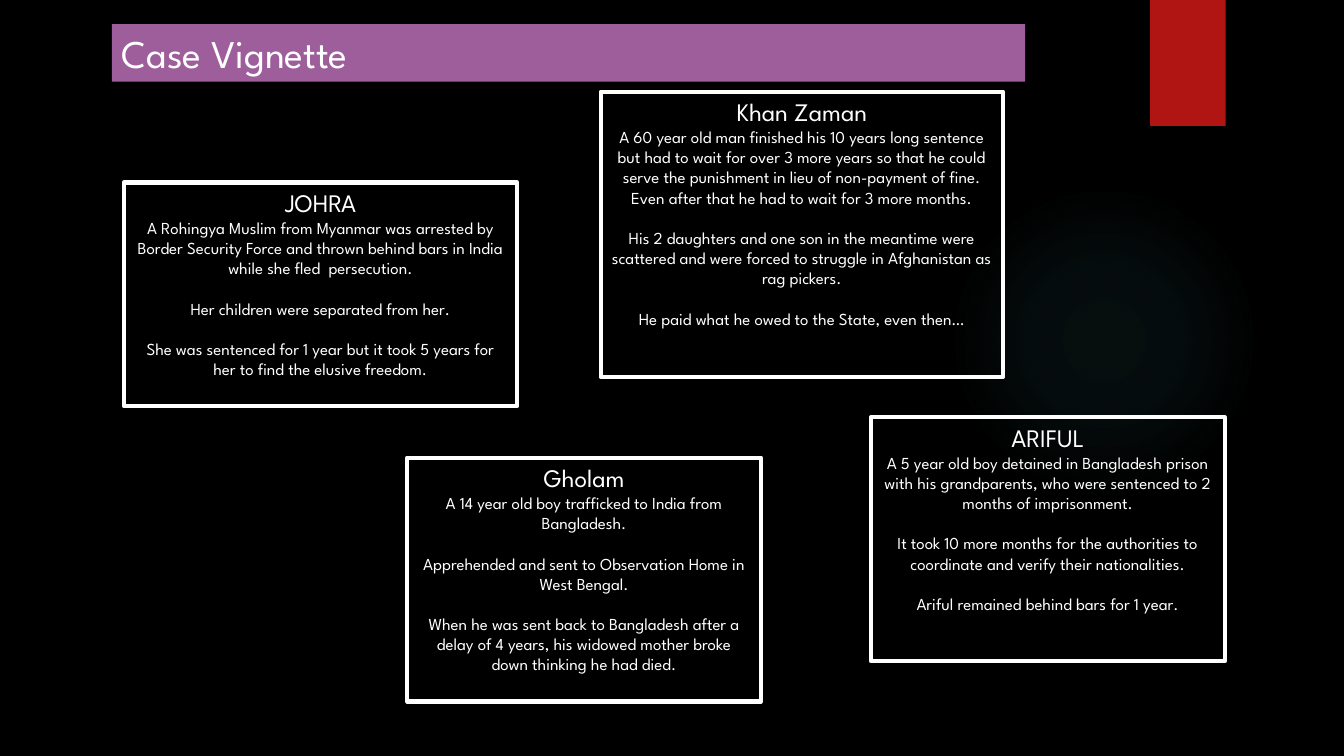
from pptx import Presentation
from pptx.dml.color import RGBColor
from pptx.enum.shapes import MSO_SHAPE
from pptx.enum.text import MSO_ANCHOR, MSO_AUTO_SIZE, PP_ALIGN
from pptx.oxml import parse_xml
from pptx.oxml.ns import nsdecls
from pptx.util import Pt

RECT, OVAL = MSO_SHAPE.RECTANGLE, MSO_SHAPE.OVAL
TOP, FIXED = MSO_ANCHOR.TOP, MSO_AUTO_SIZE.NONE
LEFT, CENTER = PP_ALIGN.LEFT, PP_ALIGN.CENTER

FONT = "League Spartan"
COLORS = {"back": "000000", "text": "FFFFFF", "title": "9E5E9B",
          "tab": "B01513", "glow": "50B9C1"}
GAP = 14.4  # one line of body text

CASES = [
    ("JOHRA", (88.6, 130.3, 280.8, 159.8), [
        "A Rohingya Muslim from Myanmar was arrested by Border Security Force "
        "and thrown behind bars in India while she fled  persecution.",
        "Her children were separated from her.",
        "She was sentenced for 1 year but it took 5 years for her to find the "
        "elusive freedom."]),
    ("Gholam", (290.9, 326.9, 252.7, 174.2), [
        "A 14 year old boy trafficked to India from Bangladesh.",
        "Apprehended and sent to Observation Home in West Bengal.",
        "When he was sent back to Bangladesh after a delay of 4 years, his "
        "widowed mother broke down thinking he had died."]),
    ("Khan Zaman", (429.1, 65.5, 287.3, 203.8), [
        "A 60 year old man finished his 10 years long sentence but had to wait "
        "for over 3 more years so that he could serve the punishment in lieu of "
        "non-payment of fine. Even after that he had to wait for 3 more months.",
        "His 2 daughters and one son in the meantime were scattered and were "
        "forced to struggle in Afghanistan as rag pickers.",
        "He paid what he owed to the State, even then…"]),
    ("ARIFUL", (622.1, 298.1, 252.7, 174.2), [
        "A 5 year old boy detained in Bangladesh prison with his grandparents, "
        "who were sentenced to 2 months of imprisonment.",
        "It took 10 more months for the authorities to coordinate and verify "
        "their nationalities.",
        "Ariful remained behind bars for 1 year."]),
]


def tint(name):
    return RGBColor.from_string(COLORS[name])


def write(para, text, size=12, align=CENTER, before=0):
    para.alignment = align
    para.line_spacing = 1.0
    para.space_before = Pt(before)
    run = para.add_run()
    run.text = text
    run.font.size = Pt(size)
    run.font.name = FONT
    run.font.color.rgb = tint("text")


def setup(frame):
    frame.word_wrap = True
    frame.auto_size = FIXED
    frame.vertical_anchor = TOP


class Page:
    def __init__(self, deck):
        self.slide = deck.slides.add_slide(deck.slide_layouts[5])
        fill = self.slide.background.fill
        fill.solid()
        fill.fore_color.rgb = tint("back")

    def shape(self, kind, place):
        item = self.slide.shapes.add_shape(kind, *map(Pt, place))
        item.shadow.inherit = False
        item.fill.background()
        item.line.fill.background()
        return item

    def glow(self, place):
        """Draw a disc that fades out from its centre."""
        disc = self.shape(OVAL, place)
        stops = "".join(
            f'<a:gs pos="{pos}000"><a:srgbClr val="{COLORS["glow"]}">'
            f'<a:alpha val="{alpha}000"/></a:srgbClr></a:gs>'
            for pos, alpha in ((0, 7), (36, 6), (69, 0)))
        grad = parse_xml(
            f'<a:gradFill {nsdecls("a")} rotWithShape="1"><a:gsLst>{stops}</a:gsLst>'
            '<a:path path="circle"><a:fillToRect l="50000" t="50000" '
            'r="50000" b="50000"/></a:path></a:gradFill>')
        props = disc.element.spPr
        props.replace(props.find("a:noFill", props.nsmap), grad)

    def tab(self, place):
        """Draw the red marker with its soft shadow."""
        mark = self.shape(RECT, place)
        mark.fill.solid()
        mark.fill.fore_color.rgb = tint("tab")
        props = mark.element.spPr
        props.find("a:effectLst", props.nsmap).append(parse_xml(
            f'<a:outerShdw {nsdecls("a")} blurRad="{Pt(3)}" dist="{Pt(2)}" '
            'dir="5400000" rotWithShape="0"><a:srgbClr val="000000">'
            '<a:alpha val="45000"/></a:srgbClr></a:outerShdw>'))

    def title(self, text, place):
        head = self.slide.shapes.title
        head.left, head.top, head.width, head.height = map(Pt, place)
        head.fill.solid()
        head.fill.fore_color.rgb = tint("title")
        setup(head.text_frame)
        write(head.text_frame.paragraphs[0], text, size=28, align=LEFT)

    def case(self, name, place, parts):
        box = self.shape(RECT, place)
        box.line.color.rgb = tint("text")
        box.line.width = Pt(3)
        frame = box.text_frame
        setup(frame)
        write(frame.paragraphs[0], name, size=18)
        for i, part in enumerate(parts):
            write(frame.add_paragraph(), part, before=GAP if i else 0)


def main():
    deck = Presentation()
    deck.slide_width, deck.slide_height = Pt(960), Pt(540)
    page = Page(deck)
    page.glow((677.5, 131.8, 221.8, 221.8))
    page.tab((821.5, 0, 54, 90))
    page.title("Case Vignette", (79.9, 17.3, 652.3, 41))
    for case in CASES:
        page.case(*case)
    deck.save("out.pptx")


if __name__ == "__main__":
    main()
